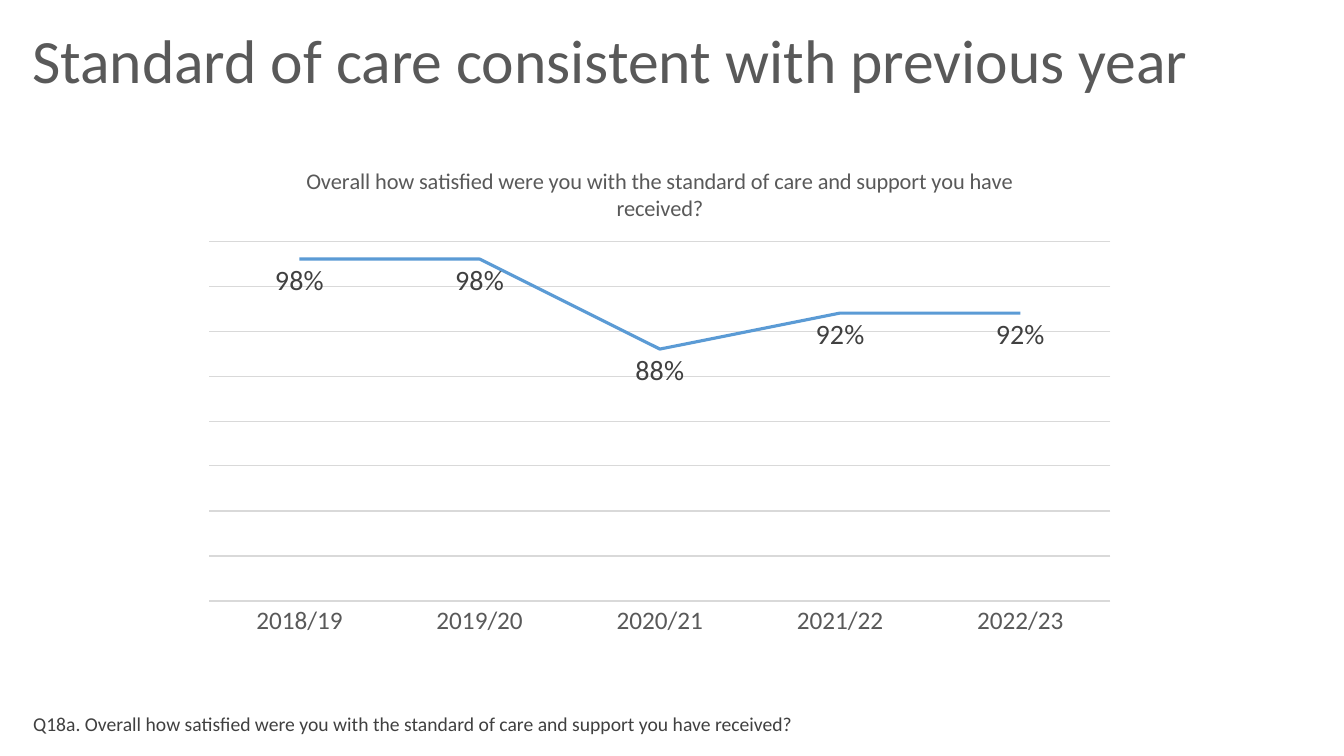
from dataclasses import dataclass

from lxml import etree
from pptx import Presentation
from pptx.chart.data import CategoryChartData
from pptx.dml.color import RGBColor
from pptx.enum.chart import XL_CHART_TYPE, XL_LABEL_POSITION, XL_TICK_MARK
from pptx.enum.text import MSO_ANCHOR
from pptx.oxml.ns import qn
from pptx.util import Inches, Pt

LINE_CHART = XL_CHART_TYPE.LINE
LABEL_BELOW = XL_LABEL_POSITION.BELOW
NO_TICKS = XL_TICK_MARK.NONE
TOP = MSO_ANCHOR.TOP


@dataclass(frozen=True)
class Theme:
    font: str = "Calibri"
    heading: RGBColor = RGBColor(0x59, 0x59, 0x59)
    dark: RGBColor = RGBColor(0x40, 0x40, 0x40)
    grid: RGBColor = RGBColor(0xD9, 0xD9, 0xD9)
    trend: RGBColor = RGBColor(0x5B, 0x9B, 0xD5)
    title_size: int = 44
    label_size: int = 20
    axis_size: int = 18
    chart_title_size: int = 16
    note_size: int = 14


theme = Theme()


def style_font(font, size, color):
    font.name = theme.font
    font.size = Pt(size)
    font.bold = False
    font.color.rgb = color


def add_text(page, text, left, top, width, height, size, color, spacing=1.0):
    box = page.shapes.add_textbox(Inches(left), Inches(top), Inches(width), Inches(height))
    box.text_frame.word_wrap = True
    box.text_frame.vertical_anchor = TOP
    box.text_frame.text = text
    para = box.text_frame.paragraphs[0]
    para.line_spacing = spacing
    style_font(para.runs[0].font, size, color)


deck = Presentation()
deck.slide_width = Inches(13.33)
deck.slide_height = Inches(7.5)
page = deck.slides.add_slide(deck.slide_layouts[6])

# Satisfaction chart
data = CategoryChartData(number_format="0%")
data.categories = ["2018/19", "2019/20", "2020/21", "2021/22", "2022/23"]
data.add_series("Series 1", [0.98, 0.98, 0.88, 0.92, 0.92])
chart = page.shapes.add_chart(
    LINE_CHART, Inches(1.89), Inches(1.45), Inches(9.31), Inches(4.96), data
).chart
chart.has_legend = False
chart.font.name = theme.font
chart.font.size = Pt(10)

# Chart title
chart.has_title = True
chart_title = chart.chart_title
chart_title.include_in_layout = False
chart_title.text_frame.text = (
    "Overall how satisfied were you with the standard of care and support you have received?"
)
style_font(
    chart_title.text_frame.paragraphs[0].runs[0].font, theme.chart_title_size, theme.heading
)

# Plot area as fractions of the chart
plot_area = chart.plots[0]._element.getparent()
layout = plot_area.find(qn("c:layout"))
if layout is None:
    layout = etree.Element(qn("c:layout"))
    plot_area.insert(0, layout)
manual = etree.SubElement(layout, qn("c:manualLayout"))
for tag, value in (
    ("layoutTarget", "inner"), ("xMode", "edge"), ("yMode", "edge"),
    ("x", "0.02"), ("y", "0.19"), ("w", "0.96"), ("h", "0.72"),
):
    etree.SubElement(manual, qn(f"c:{tag}")).set("val", value)

# Axes
years = chart.category_axis
years.major_tick_mark = NO_TICKS
years.minor_tick_mark = NO_TICKS
style_font(years.tick_labels.font, theme.axis_size, theme.heading)

share = chart.value_axis
share.visible = False
share.minimum_scale = 0.6
share.maximum_scale = 1
share.major_unit = 0.05
share.has_major_gridlines = True
for line in (years.format.line, share.major_gridlines.format.line):
    line.color.rgb = theme.grid
    line.width = Pt(0.75)

# Trend line and its labels
plot = chart.plots[0]
plot.vary_by_categories = False
trend = plot.series[0]
trend.smooth = False
trend.format.line.color.rgb = theme.trend
trend.format.line.width = Pt(2.25)
labels = trend.data_labels
labels.show_value = True
labels.position = LABEL_BELOW
labels.number_format = "0%"
labels.number_format_is_linked = False
style_font(labels.font, theme.label_size, theme.dark)

# Slide title and question note
add_text(page, "Standard of care consistent with previous year",
         0.22, 0.25, 12.63, 1.19, theme.title_size, theme.heading, 0.9)
add_text(page, "Q18a. Overall how satisfied were you with the standard of care and support "
         "you have received?", 0.23, 7.01, 10.5, 0.34, theme.note_size, theme.dark)

deck.save("out.pptx")
